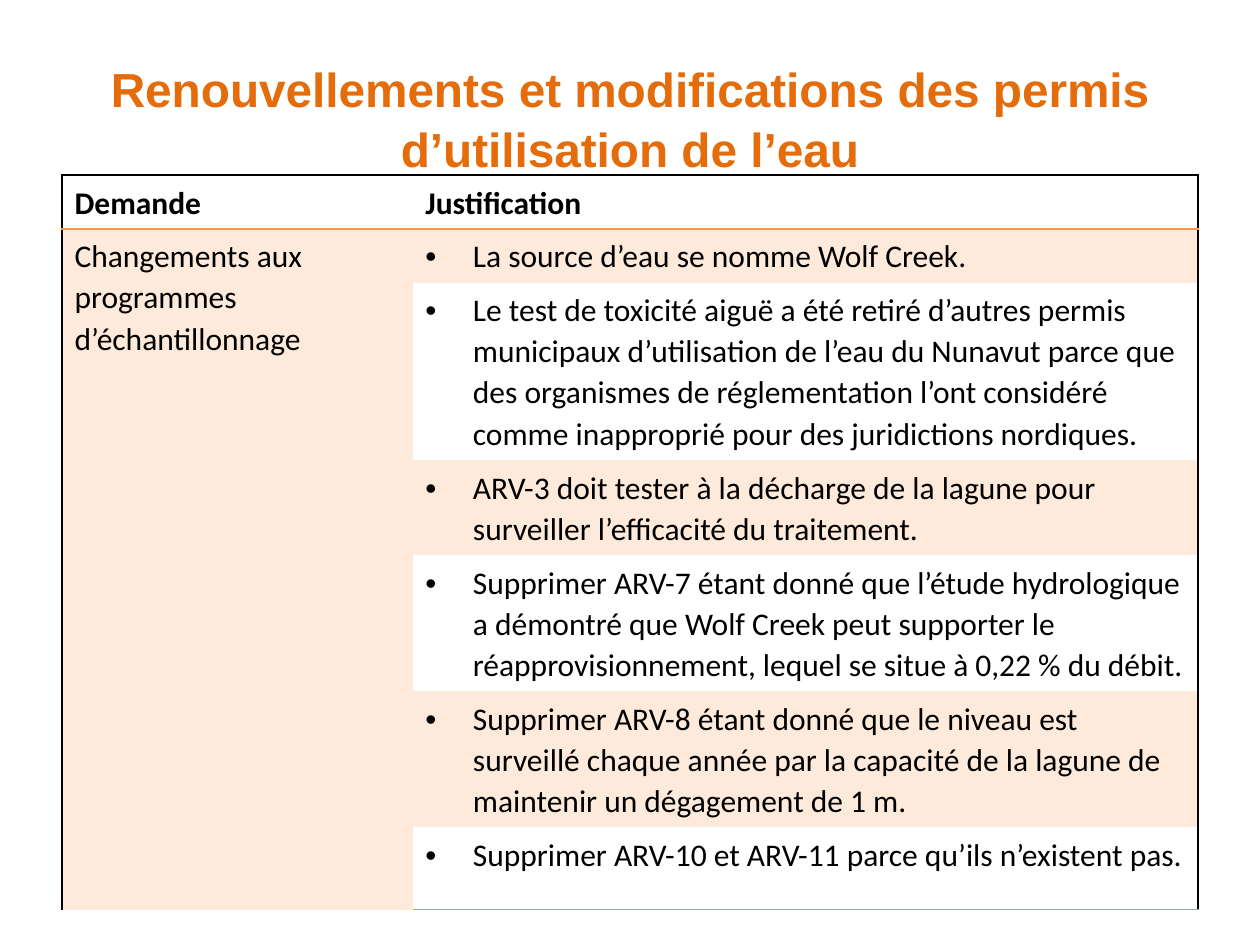
"""Build the slide on renewals and amendments of water use permits."""
from lxml import etree
from pptx import Presentation
from pptx.dml.color import RGBColor
from pptx.enum.text import MSO_ANCHOR, MSO_AUTO_SIZE, PP_ALIGN
from pptx.oxml.ns import qn
from pptx.util import Cm, Pt

MIDDLE = MSO_ANCHOR.MIDDLE
CENTER = PP_ALIGN.CENTER
NO_AUTOFIT = MSO_AUTO_SIZE.NONE
PLAIN_TABLE_STYLE = "{2D5ABB26-0587-4C30-8999-92F81FD0307C}"

COLORS = {"title": "E46C0A", "text": "000000", "frame": "000000",
          "rule": "F79646", "band": "FDEADA"}

TITLE = "Renouvellements et modifications des permis d’utilisation de l’eau"
HEADERS = ["Demande", "Justification"]
REQUEST = "Changements aux programmes d’échantillonnage"
REASONS = [
    "La source d’eau se nomme Wolf Creek.",
    "Le test de toxicité aiguë a été retiré d’autres permis municipaux "
    "d’utilisation de l’eau du Nunavut parce que des organismes de "
    "réglementation l’ont considéré comme inapproprié pour des juridictions "
    "nordiques.",
    "ARV-3 doit tester à la décharge de la lagune pour surveiller "
    "l’efficacité du traitement.",
    "Supprimer ARV-7 étant donné que l’étude hydrologique a démontré que Wolf "
    "Creek peut supporter le réapprovisionnement, lequel se situe à 0,22 % du "
    "débit.",
    "Supprimer ARV-8 étant donné que le niveau est surveillé chaque année par "
    "la capacité de la lagune de maintenir un dégagement de 1 m.",
    "Supprimer ARV-10 et ARV-11 parce qu’ils n’existent pas.",
]
COLUMN_WIDTHS = [7.07, 15.83]
ROW_HEIGHTS = [1.08, 1.08, 3.58, 1.9, 2.74, 2.74, 1.66]


def write(paragraph, text, color, font_format):
    run = paragraph.add_run()
    run.text = text
    run.font.color.rgb = RGBColor.from_string(COLORS[color])
    for name, value in font_format.items():
        setattr(run.font, name, value)


def add_border(cell, side, color):
    line = etree.SubElement(cell._tc.get_or_add_tcPr(), qn(f"a:ln{side}"), w=str(Pt(1)))
    fill = etree.SubElement(line, qn("a:solidFill"))
    etree.SubElement(fill, qn("a:srgbClr"), val=COLORS[color])


presentation = Presentation()
presentation.slide_width = Cm(25.4)
presentation.slide_height = Cm(19.05)
slide = presentation.slides.add_slide(presentation.slide_layouts[5])

title = slide.shapes.title
title_format = {"left": Cm(0), "top": Cm(0.76), "width": Cm(25.4), "height": Cm(3.18)}
for name, value in title_format.items():
    setattr(title, name, value)
title.text_frame.auto_size = NO_AUTOFIT
title.text_frame.vertical_anchor = MIDDLE
heading = title.text_frame.paragraphs[0]
heading.alignment = CENTER
heading.line_spacing = 1.05
write(heading, TITLE, "title", {"name": "Arial", "size": Pt(27.3), "bold": True})

table = slide.shapes.add_table(
    len(ROW_HEIGHTS), len(COLUMN_WIDTHS), Cm(1.25), Cm(3.53),
    Cm(sum(COLUMN_WIDTHS)), Cm(sum(ROW_HEIGHTS))).table
table._tbl.tblPr.find(qn("a:tableStyleId")).text = PLAIN_TABLE_STYLE
table.horz_banding = False
for column, width in zip(table.columns, COLUMN_WIDTHS):
    column.width = Cm(width)
for row, height in zip(table.rows, ROW_HEIGHTS):
    row.height = Cm(height)

last_row = len(REASONS)
table.cell(1, 0).merge(table.cell(last_row, 0))
texts = [HEADERS] + [["", reason] for reason in REASONS]
texts[1][0] = REQUEST

for row_index, row_texts in enumerate(texts):
    for column_index, text in enumerate(row_texts):
        cell = table.cell(row_index, column_index)
        add_border(cell, "LR"[column_index], "frame")
        if row_index == 0:
            add_border(cell, "T", "frame")
        if row_index in (0, last_row):
            add_border(cell, "B", "rule")
        if row_index and (column_index == 0 or row_index % 2):
            cell.fill.solid()
            cell.fill.fore_color.rgb = RGBColor.from_string(COLORS["band"])
        else:
            cell.fill.background()
        if not text:
            continue
        paragraph = cell.text_frame.paragraphs[0]
        if row_index and column_index:
            properties = paragraph._p.get_or_add_pPr()
            properties.set("marL", str(Cm(0.96)))
            properties.set("indent", str(Cm(-0.96)))
            etree.SubElement(properties, qn("a:buFont"), typeface="Arial")
            etree.SubElement(properties, qn("a:buChar"), char="•")
            tabs = etree.SubElement(properties, qn("a:tabLst"))
            etree.SubElement(tabs, qn("a:tab"), pos=str(Cm(1.27)), algn="l")
        paragraph.line_spacing = 1.07
        paragraph.space_after = Pt(8)
        write(paragraph, text, "text",
              {"name": "Calibri", "size": Pt(18), "bold": row_index == 0})

presentation.save("out.pptx")
